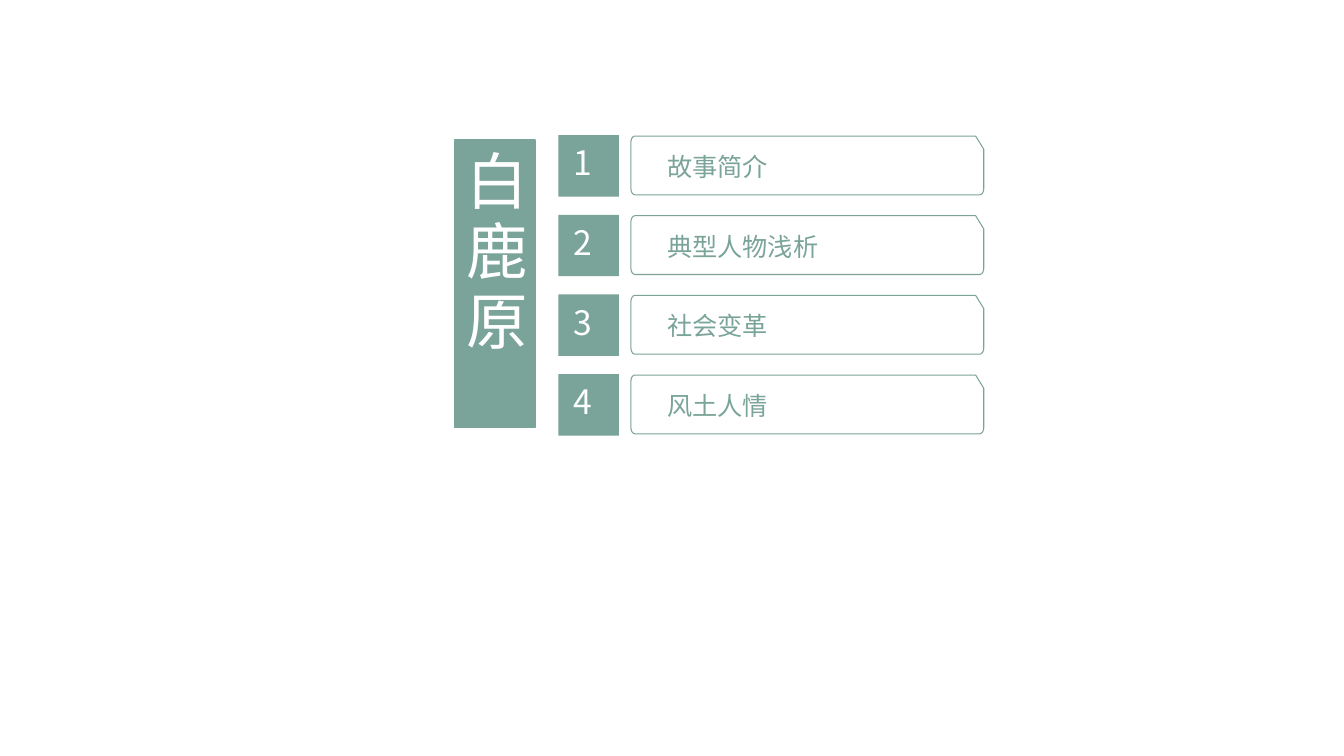
from math import cos, sin, radians
from pptx import Presentation
from pptx.dml.color import RGBColor as Rgb
from pptx.enum.shapes import MSO_SHAPE as Kind
from pptx.enum.text import MSO_ANCHOR as Anchor, PP_ALIGN as Align
from pptx.util import Pt

TITLE = "白鹿原"
ITEMS = ["故事简介", "典型人物浅析", "社会变革", "风土人情"]
GREEN, WHITE = "7AA499", "FFFFFF"
FONT = "Noto Sans CJK JP"
STEP = 56.9
TIGHT = dict(margin_left=Pt(5), margin_right=Pt(5),
             margin_top=Pt(2.9), margin_bottom=Pt(2.9))
FRAME = dict(left=450.7, top=97.2, width=252, height=42)
ROUND = (3, 4.4)
SNIP = (5.8, 9.4)


def paint(part, code):
    part.rgb = Rgb.from_string(code)


def write(shape, text, size, color, **form):
    frame = shape.text_frame
    for key, val in dict(form, word_wrap=True).items():
        setattr(frame, key, val)
    para = frame.paragraphs[0]
    para.alignment = Align.LEFT
    run = para.add_run()
    run.text = text
    for key, val in dict(name=FONT, size=Pt(size)).items():
        setattr(run.font, key, val)
    paint(run.font.color, color)
    props = run._r.get_or_add_rPr()
    ea = props.makeelement(props.tag.replace("rPr", "ea"), {"typeface": FONT})
    props.append(ea)
    return props


def block(shapes, *box):
    shape = shapes.add_shape(Kind.RECTANGLE, *map(Pt, box))
    shape.shadow.inherit = False
    shape.fill.solid()
    paint(shape.fill.fore_color, GREEN)
    shape.line.fill.background()
    return shape


def curve(x, y, start):
    rx, ry = ROUND
    turns = [radians(start + 15 * n) for n in range(7)]
    return [(x + rx * cos(t), y + ry * sin(t)) for t in turns]


def outline(shapes, left, top, width, height):
    right, base = left + width, top + height
    rx, ry = ROUND
    spots = [(right - SNIP[0], top), (right, top + SNIP[1])]
    spots += curve(right - rx, base - ry, 0)
    spots += curve(left + rx, base - ry, 90)
    spots += curve(left + rx, top + ry, 180)
    spots = [(Pt(x), Pt(y)) for x, y in spots]
    pen = shapes.build_freeform(*spots[0], scale=1.0)
    pen.add_line_segments(spots[1:], close=True)
    shape = pen.convert_to_shape()
    shape.shadow.inherit = False
    shape.fill.background()
    paint(shape.line.color, GREEN)
    shape.line.width = Pt(0)


deck = Presentation()
deck.slide_width, deck.slide_height = Pt(960), Pt(540)
shapes = deck.slides.add_slide(deck.slide_layouts[6]).shapes

for row, item in enumerate(ITEMS):
    drop = row * STEP
    outline(shapes, **dict(FRAME, top=FRAME["top"] + drop))
    label = shapes.add_textbox(*map(Pt, (471.6, 105.1 + drop, 230, 27.4)))
    write(label, item, 18, GREEN, **TIGHT)
    group = shapes.add_group_shape().shapes
    block(group, 398.9, 96.5 + drop, 43.2, 43.9)
    digit = block(group, 404.6, 98.8 + drop, 29.5, 34.6)
    write(digit, str(row + 1), 24, WHITE, vertical_anchor=Anchor.TOP, **TIGHT)

banner = block(shapes, 324.7, 100.1, 57.6, 205.2)
paint(banner.line.color, GREEN)
banner.line.width = Pt(1)
props = write(banner, TITLE, 44, WHITE, vertical_anchor=Anchor.MIDDLE)
props.set("spc", "600")
banner.text_frame._txBody.bodyPr.set("vert", "eaVert")

deck.save("out.pptx")
